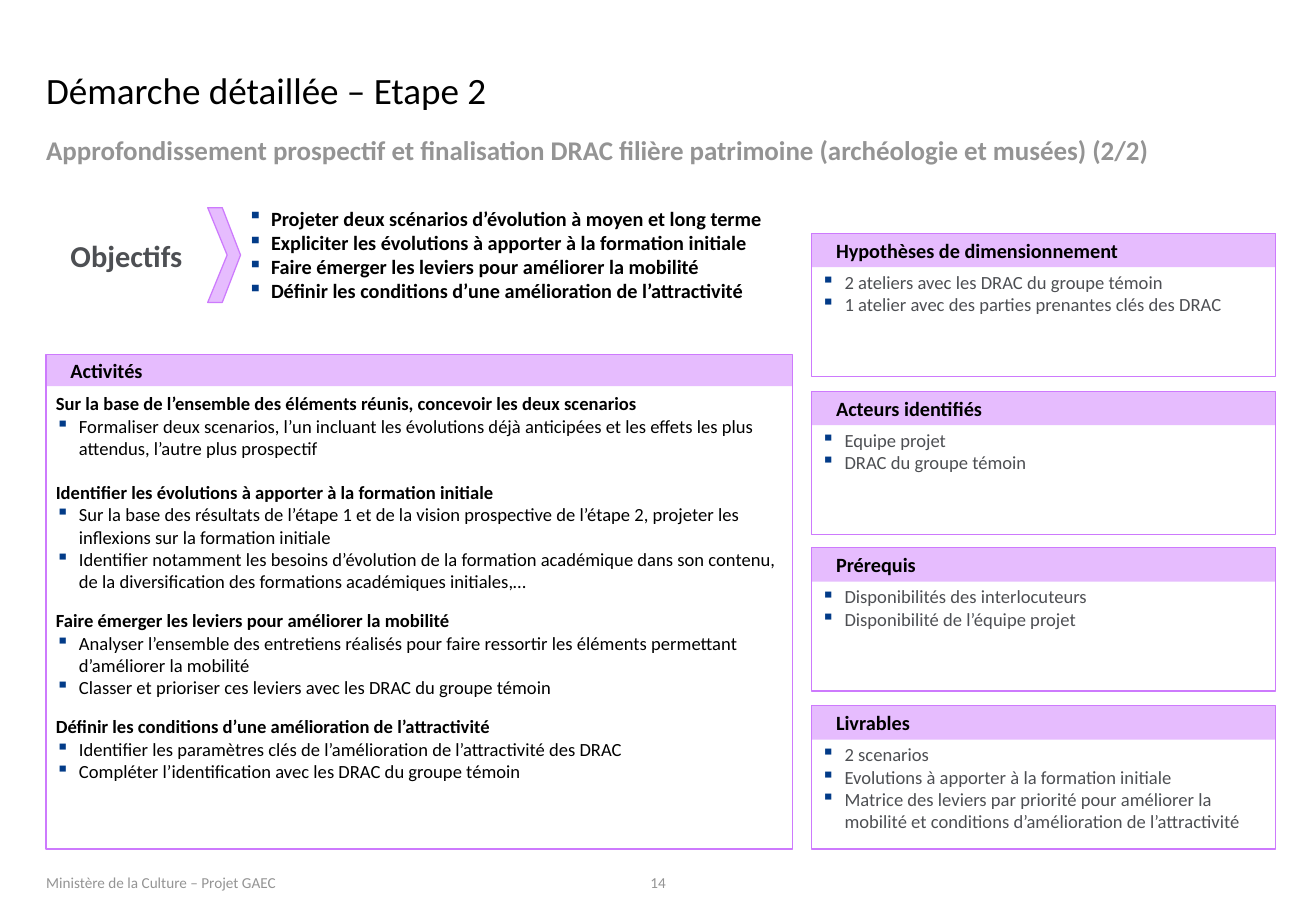
from lxml.etree import SubElement
from pptx import Presentation
from pptx.dml.color import RGBColor
from pptx.enum.shapes import MSO_SHAPE as Shape
from pptx.enum.text import MSO_ANCHOR as Anchor, PP_ALIGN as Align
from pptx.oxml.ns import qn
from pptx.util import Pt

PX = 9144  # EMU per px, 100 px to the inch
FONT = "Calibri"
BLACK = RGBColor(0x00, 0x00, 0x00)
WHITE = RGBColor(0xFF, 0xFF, 0xFF)
GREY = RGBColor(0x94, 0x94, 0x94)
SLATE = RGBColor(0x4D, 0x4F, 0x53)
LILAC = RGBColor(0xE6, 0xBC, 0xFE)
PURPLE = RGBColor(0xCD, 0x7A, 0xFD)
BLUE = "023B88"

GOALS = [
    "Projeter deux scénarios d’évolution à moyen et long terme",
    "Expliciter les évolutions à apporter à la formation initiale",
    "Faire émerger les leviers pour améliorer la mobilité",
    "Définir les conditions d’une amélioration de l’attractivité",
]

# Each task: space before in points, heading, bullets
TASKS = [
    (0, "Sur la base de l’ensemble des éléments réunis, concevoir les deux scenarios", [
        "Formaliser deux scenarios, l’un incluant les évolutions déjà anticipées "
        "et les effets les plus attendus, l’autre plus prospectif"]),
    (13, "Identifier les évolutions à apporter à la formation initiale", [
        "Sur la base des résultats de l’étape 1 et de la vision prospective de "
        "l’étape 2, projeter les inflexions sur la formation initiale",
        "Identifier notamment les besoins d’évolution de la formation académique dans "
        "son contenu, de la diversification des formations académiques initiales,…"]),
    (10, "Faire émerger les leviers pour améliorer la mobilité", [
        "Analyser l’ensemble des entretiens réalisés pour faire ressortir les "
        "éléments permettant d’améliorer la mobilité",
        "Classer et prioriser ces leviers avec les DRAC du groupe témoin"]),
    (10, "Définir les conditions d’une amélioration de l’attractivité", [
        "Identifier les paramètres clés de l’amélioration de l’attractivité des DRAC",
        "Compléter l’identification avec les DRAC du groupe témoin"]),
]

CARDS = [
    ("Hypothèses de dimensionnement", [
        "2 ateliers avec les DRAC du groupe témoin",
        "1 atelier avec des parties prenantes clés des DRAC"]),
    ("Acteurs identifiés", ["Equipe projet", "DRAC du groupe témoin"]),
    ("Prérequis", ["Disponibilités des interlocuteurs", "Disponibilité de l’équipe projet"]),
    ("Livrables", [
        "2 scenarios",
        "Evolutions à apporter à la formation initiale",
        "Matrice des leviers par priorité pour améliorer la mobilité "
        "et conditions d’amélioration de l’attractivité"]),
]


def set_frame(shape, pads, anchor):
    frame = shape.text_frame
    frame.word_wrap = True
    frame.vertical_anchor = anchor
    (frame.margin_left, frame.margin_top,
     frame.margin_right, frame.margin_bottom) = [pad * PX for pad in pads]
    return frame


def style(para, size, color, bold=False, align=Align.LEFT):
    para.alignment = align
    for run in para.runs:
        font = run.font
        font.name, font.size, font.bold = FONT, Pt(size), bold
        font.color.rgb = color


def add_mark(para):
    props = para._p.get_or_add_pPr()
    props.set("marL", str(19 * PX))
    props.set("indent", str(-19 * PX))
    tint = SubElement(props, qn("a:buClr"))
    SubElement(tint, qn("a:srgbClr")).set("val", BLUE)
    SubElement(props, qn("a:buChar")).set("char", "▪")


def fill_list(frame, items, size, color, bold=False):
    frame.text = "\n".join(items)
    for para in frame.paragraphs:
        add_mark(para)
        style(para, size, color, bold)


def add_text(slide, box, text, size, color, bold=False, anchor=Anchor.TOP, align=Align.LEFT):
    shape = slide.shapes.add_textbox(*[n * PX for n in box])
    frame = set_frame(shape, (0, 0, 0, 0), anchor)
    frame.text = text
    style(frame.paragraphs[0], size, color, bold, align)


def paint(shape, fill=None, line=None):
    shape.shadow.inherit = False
    if fill is None:
        shape.fill.background()
    else:
        shape.fill.solid()
        shape.fill.fore_color.rgb = fill
    if line is None:
        shape.line.fill.background()
    else:
        shape.line.color.rgb = line
        shape.line.width = Pt(0.75)


def add_label(slide, kind, box, text, size, color, fill):
    shape = slide.shapes.add_shape(kind, *[n * PX for n in box])
    paint(shape, fill)
    frame = set_frame(shape, (20, 4, 0, 4), Anchor.MIDDLE)
    frame.text = text
    style(frame.paragraphs[0], size, color, True)
    return shape


def add_panel(slide, box, head, title):
    """Draw a titled frame and return the text frame of its body."""
    left, top, width, height = box
    add_label(slide, Shape.RECTANGLE, (left, top, width, head), title, 12, BLACK, LILAC)
    body = slide.shapes.add_shape(Shape.RECTANGLE, *[n * PX for n in box])
    paint(body, line=PURPLE)
    return set_frame(body, (8, 31, 4, 4), Anchor.TOP)


def add_goals(slide):
    area = slide.shapes.add_textbox(200 * PX, 166 * PX, 451 * PX, 87 * PX)
    fill_list(set_frame(area, (4, 4, 4, 4), Anchor.MIDDLE), GOALS, 12, BLACK, True)
    tag = add_label(slide, Shape.PENTAGON, (38, 167, 162, 87), "Objectifs", 18, SLATE, WHITE)
    tag.adjustments[0] = 0.11
    # Chevron
    pen = slide.shapes.build_freeform(198, 210, scale=PX)
    pen.add_line_segments([(183, 171), (171, 171), (187, 210), (171, 249), (183, 249)], close=True)
    paint(pen.convert_to_shape(), LILAC, PURPLE)


def add_tasks(slide):
    frame = add_panel(slide, (38, 292, 614, 407), 26, "Activités")
    rows = [(text, n == 0, gap) for gap, head, items in TASKS
            for n, text in enumerate([head, *items])]
    frame.text = "\n".join(text for text, _, _ in rows)
    for para, (_, bold, gap) in zip(frame.paragraphs, rows):
        if not bold:
            add_mark(para)
        elif gap:
            para.space_before = Pt(gap)
        style(para, 11, BLACK, bold)


def add_cards(slide):
    for n, (title, items) in enumerate(CARDS):
        top = 192 + round(n * 389 / 3)
        frame = add_panel(slide, (668, top, 382, 118), 28, title)
        fill_list(frame, items, 11, SLATE)


def main():
    deck = Presentation()
    deck.slide_width, deck.slide_height = 1083 * PX, 750 * PX
    slide = deck.slides.add_slide(deck.slide_layouts[6])

    # Footer
    add_text(slide, (38, 709, 248, 25), "Ministère de la Culture – Projet GAEC",
             9, GREY, anchor=Anchor.BOTTOM)
    add_text(slide, (517, 711, 49, 23), "14", 9, GREY, anchor=Anchor.BOTTOM, align=Align.CENTER)

    # Headings
    add_text(slide, (38, 110, 1007, 37),
             "Approfondissement prospectif et finalisation DRAC filière patrimoine "
             "(archéologie et musées) (2/2)", 16, GREY, True)
    add_text(slide, (38, 21, 1007, 71), "Démarche détaillée – Etape 2",
             22, BLACK, anchor=Anchor.BOTTOM)

    # Content
    add_goals(slide)
    add_tasks(slide)
    add_cards(slide)
    deck.save("out.pptx")


if __name__ == "__main__":
    main()
